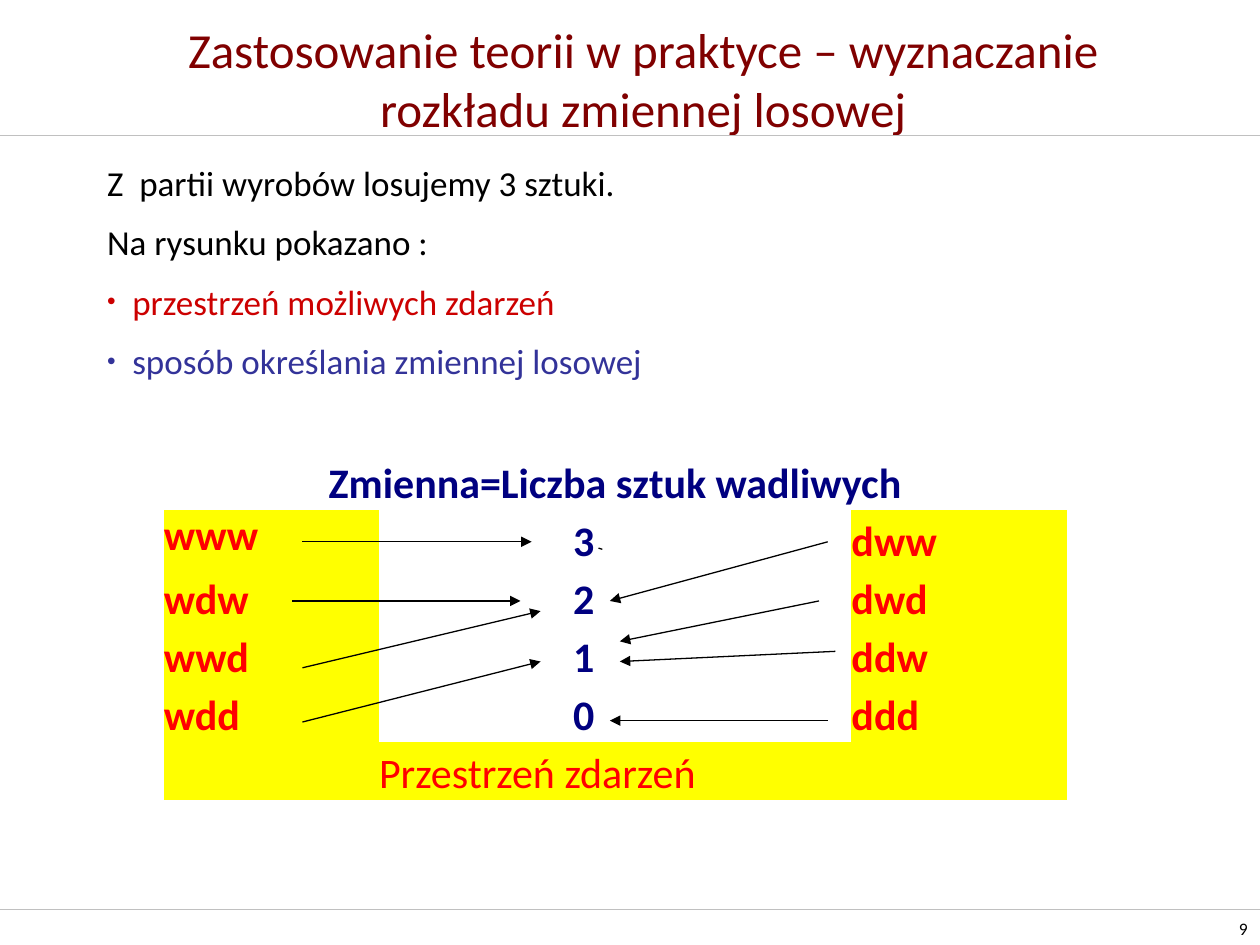
"""Build a slide that maps outcomes of three draws to a random variable."""
from typing import Any, NamedTuple

from lxml import etree
from pptx import Presentation
from pptx import util as u
from pptx.dml.color import RGBColor
from pptx.enum import shapes, text
from pptx.oxml import ns

BLACK = RGBColor(0x00, 0x00, 0x00)
SILVER = RGBColor(0xC0, 0xC0, 0xC0)
MAROON = RGBColor(0x80, 0x00, 0x00)
CRIMSON = RGBColor(0xCC, 0x00, 0x00)
INDIGO = RGBColor(0x33, 0x33, 0x99)
NAVY = RGBColor(0x00, 0x00, 0x80)
RED = RGBColor(0xFF, 0x00, 0x00)
YELLOW = RGBColor(0xFF, 0xFF, 0x00)
FONT = "Calibri"
NO_TABLE_STYLE = "{2D5ABB26-0587-4C30-8999-92F81FD0307C}"
ALIGN, ANCHOR = text.PP_ALIGN, text.MSO_ANCHOR


class Statement(NamedTuple):
    wording: str
    color: RGBColor = BLACK
    bulleted: bool = False


class Line(NamedTuple):
    x1: float
    y1: float
    x2: float
    y2: float
    color: RGBColor = BLACK
    width: float = 0.75
    arrow: bool = True


class Outcome(NamedTuple):
    left: str
    value: str
    right: str


STATEMENTS = [
    Statement("Z  partii wyrobów losujemy 3 sztuki."),
    Statement("Na rysunku pokazano :"),
    Statement("przestrzeń możliwych zdarzeń", CRIMSON, True),
    Statement("sposób określania zmiennej losowej", INDIGO, True),
]
OUTCOMES = [
    Outcome("www", "3", "dww"),
    Outcome("wdw", "2", "dwd"),
    Outcome("wwd", "1", "ddw"),
    Outcome("wdd", "0", "ddd"),
]
RULES = [Line(0, y, 720, y, SILVER, 0.25, False) for y in (77, 519.8)]
MAPPINGS = [
    Line(342, 313.2, 344.2, 313.9, arrow=False),
    Line(473, 411.8, 348.5, 411.8),
    Line(172.8, 309.6, 303.8, 309.6),
    Line(167, 343.4, 297.4, 343.4),
    Line(172.8, 381.6, 308.9, 349.2),
    Line(477.4, 372.2, 354.2, 378),
    Line(172.8, 412.6, 308.9, 378),
    Line(473, 309.6, 348.5, 343.4),
    Line(468, 343.4, 354.2, 366.5),
]


def assign(target: Any, values: dict[str, Any]) -> None:
    """Set each named attribute on the target."""
    for name, value in values.items():
        setattr(target, name, value)


def place(box: Any, left: float, top: float, width: float, height: float) -> None:
    """Position a box, with lengths in points."""
    assign(box, {"left": u.Pt(left), "top": u.Pt(top),
                 "width": u.Pt(width), "height": u.Pt(height)})


def write(paragraph: Any, wording: str, size: float, color: RGBColor,
          align: Any = ALIGN.LEFT, bold: bool = False) -> None:
    """Fill a paragraph with one formatted run."""
    run = paragraph.add_run()
    run.text = wording
    assign(run.font, {"name": FONT, "size": u.Pt(size), "bold": bold})
    run.font.color.rgb = color
    paragraph.alignment = align


def set_bullet(paragraph: Any, bulleted: bool) -> None:
    """Give a paragraph a small hanging bullet, or none."""
    properties = paragraph._p.get_or_add_pPr()
    indent = u.Pt(14.4) if bulleted else 0
    properties.set("marL", str(indent))
    properties.set("indent", str(-indent))
    if bulleted:
        etree.SubElement(properties, ns.qn("a:buSzPct"), val="70000")
        etree.SubElement(properties, ns.qn("a:buChar"), char="•")
    else:
        etree.SubElement(properties, ns.qn("a:buNone"))


def draw_line(slide: Any, line: Line) -> None:
    """Draw a straight line, with an arrowhead at its end if asked."""
    connector = slide.shapes.add_connector(
        shapes.MSO_CONNECTOR.STRAIGHT,
        u.Pt(line.x1), u.Pt(line.y1), u.Pt(line.x2), u.Pt(line.y2))
    connector.line.color.rgb = line.color
    connector.line.width = u.Pt(line.width)
    if line.arrow:
        etree.SubElement(connector.line._get_or_add_ln(),
                         ns.qn("a:tailEnd"), type="triangle")
    etree.SubElement(connector._element.spPr, ns.qn("a:effectLst"))


def add_heading(slide: Any) -> None:
    """Fill the title placeholder."""
    title = slide.shapes.title
    place(title, 60, 0, 615, 90)
    assign(title.text_frame, {"vertical_anchor": ANCHOR.MIDDLE, "word_wrap": True,
                              "auto_size": text.MSO_AUTO_SIZE.NONE})
    write(title.text_frame.paragraphs[0],
          "Zastosowanie teorii w praktyce – wyznaczanie rozkładu zmiennej losowej",
          28, MAROON, ALIGN.CENTER)


def add_statements(slide: Any) -> None:
    """Fill the body placeholder."""
    body = slide.placeholders[1]
    place(body, 54, 88.6, 588, 175.7)
    frame = body.text_frame
    frame.auto_size = text.MSO_AUTO_SIZE.NONE
    for index, statement in enumerate(STATEMENTS):
        paragraph = frame.add_paragraph() if index else frame.paragraphs[0]
        paragraph.space_before = u.Pt(10 if index else 0)
        set_bullet(paragraph, statement.bulleted)
        write(paragraph, statement.wording, 20, statement.color)


def add_outcomes(slide: Any) -> None:
    """Lay out the outcomes on both sides of the variable's values."""
    row_count = len(OUTCOMES) + 2
    widths = (123, 123, 147, 123)
    table = slide.shapes.add_table(
        row_count, len(widths), u.Pt(93.6), u.Pt(258.5),
        u.Pt(sum(widths)), u.Pt(33.12 * row_count)).table
    assign(table, {"first_row": False, "horz_banding": False})
    table._tbl.tblPr.find(ns.qn("a:tableStyleId")).text = NO_TABLE_STYLE
    for column, width in zip(table.columns, widths):
        column.width = u.Pt(width)
    last = row_count - 1
    for row in range(row_count):
        for column in range(len(widths)):
            cell = table.cell(row, column)
            assign(cell, {"margin_left": 0, "margin_right": 0, "margin_top": 0,
                          "margin_bottom": 0, "vertical_anchor": ANCHOR.BOTTOM})
            if row == last or (row and column in (0, 3)):
                cell.fill.solid()
                cell.fill.fore_color.rgb = YELLOW
            else:
                cell.fill.background()
    table.cell(0, 0).merge(table.cell(0, 3))
    table.cell(last, 1).merge(table.cell(last, 2))
    table.cell(1, 0).vertical_anchor = ANCHOR.TOP

    def label(row: int, column: int, *formatting: Any) -> None:
        write(table.cell(row, column).text_frame.paragraphs[0], *formatting)

    label(0, 0, "Zmienna=Liczba sztuk wadliwych", 24, NAVY, ALIGN.CENTER, True)
    for row, outcome in enumerate(OUTCOMES, 1):
        label(row, 0, outcome.left, 24, RED, ALIGN.LEFT, True)
        label(row, 1, outcome.value, 24, NAVY, ALIGN.RIGHT, True)
        label(row, 3, outcome.right, 24, RED, ALIGN.LEFT, True)
    label(last, 1, "Przestrzeń zdarzeń", 24, RED)


def add_page_number(slide: Any) -> None:
    """Put the page number in the bottom right corner."""
    number = slide.shapes.add_textbox(u.Pt(683.3), u.Pt(519.8), u.Pt(36.7), u.Pt(20.2))
    assign(number.text_frame, {"word_wrap": True, "vertical_anchor": ANCHOR.BOTTOM})
    write(number.text_frame.paragraphs[0], "9", 10, BLACK, ALIGN.RIGHT)


def main() -> None:
    """Build and save the slide."""
    deck = Presentation()
    assign(deck, {"slide_width": u.Pt(720), "slide_height": u.Pt(540)})
    slide = deck.slides.add_slide(deck.slide_layouts[1])
    for rule in RULES:
        draw_line(slide, rule)
    add_page_number(slide)
    add_heading(slide)
    add_statements(slide)
    add_outcomes(slide)
    for mapping in MAPPINGS:
        draw_line(slide, mapping)
    deck.save("out.pptx")


if __name__ == "__main__":
    main()
